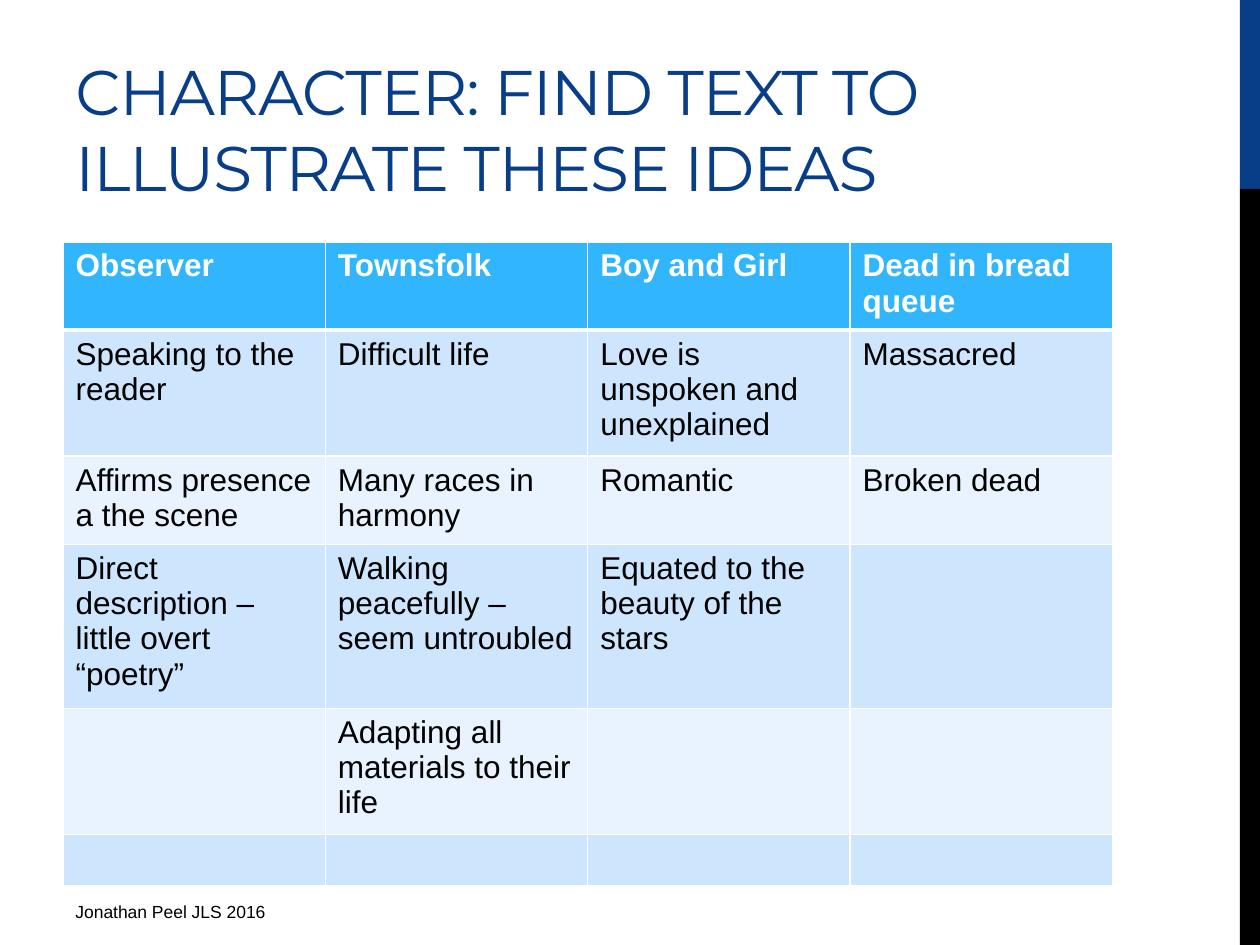
from lxml.etree import SubElement
from pptx import Presentation
from pptx.dml.color import RGBColor
from pptx.enum.shapes import MSO_SHAPE as Shape
from pptx.enum.text import MSO_ANCHOR as Anchor
from pptx.oxml.ns import qn
from pptx.util import Inches, Pt

NAVY, BLACK, WHITE = "073E87", "000000", "FFFFFF"
HEADER_FILL, BAND_FILLS = "31B6FD", ("CEE5FE", "E8F3FF")

ROWS = [
    ["Observer", "Townsfolk", "Boy and Girl", "Dead in bread queue"],
    ["Speaking to the reader", "Difficult life",
     "Love is unspoken and unexplained", "Massacred"],
    ["Affirms presence a the scene", "Many races in harmony", "Romantic", "Broken dead"],
    ["Direct description – little overt “poetry”",
     "Walking peacefully – seem untroubled", "Equated to the beauty of the stars", ""],
    ["", "Adapting all materials to their life", "", ""],
    ["", "", "", ""],
]


def color(value):
    return RGBColor.from_string(value)


def add_border(cell, side, width):
    """Draw a white line on one side (L, R, T or B) of a cell."""
    line = SubElement(cell._tc.get_or_add_tcPr(), qn(f"a:ln{side}"), w=str(Pt(width)))
    fill = SubElement(line, qn("a:solidFill"))
    SubElement(fill, qn("a:srgbClr"), val=WHITE)


class SlideBuilder:
    def __init__(self, page, font="Arial"):
        self.page = page
        self.font = font

    def style(self, para, size, tint, bold=False, font=None):
        para.font.name = font or self.font
        para.font.size = Pt(size)
        para.font.bold = bold
        para.font.color.rgb = color(tint)

    def bar(self, left, top, width, height, fill):
        box = self.page.shapes.add_shape(
            Shape.RECTANGLE, Inches(left), Inches(top), Inches(width), Inches(height))
        box.shadow.inherit = False
        box.fill.solid()
        box.fill.fore_color.rgb = color(fill)
        box.line.fill.background()

    def text(self, left, top, width, height, words, size, tint,
             font=None, anchor=Anchor.TOP, spacing=0):
        """Add a one-paragraph text box; spacing is letter spacing in points."""
        box = self.page.shapes.add_textbox(
            Inches(left), Inches(top), Inches(width), Inches(height))
        frame = box.text_frame
        frame.word_wrap = True
        frame.vertical_anchor = anchor
        para = frame.paragraphs[0]
        span = para.add_run()
        span.text = words
        self.style(para, size, tint, font=font)
        if spacing:
            span._r.get_or_add_rPr().set("spc", str(round(spacing * 100)))

    def table(self, left, top, width, row_height, rows, size):
        """Add a banded table whose rows grow to fit their text."""
        table = self.page.shapes.add_table(
            len(rows), len(rows[0]), Inches(left), Inches(top),
            Inches(width), Inches(row_height * len(rows))).table
        for r, row in enumerate(rows):
            header = r == 0
            fill = HEADER_FILL if header else BAND_FILLS[(r - 1) % 2]
            widths = {"L": 1, "R": 1, "T": 3 if r == 1 else 1, "B": 3 if header else 1}
            for c, words in enumerate(row):
                cell = table.cell(r, c)
                for side, line_width in widths.items():
                    add_border(cell, side, line_width)
                cell.fill.solid()
                cell.fill.fore_color.rgb = color(fill)
                cell.text = words
                self.style(cell.text_frame.paragraphs[0], size,
                           WHITE if header else BLACK, bold=header)


def main():
    deck = Presentation()
    deck.slide_width, deck.slide_height = Inches(10), Inches(7.5)
    builder = SlideBuilder(deck.slides.add_slide(deck.slide_layouts[6]))

    builder.bar(9.84, 0, 0.16, 1.5, NAVY)
    builder.bar(9.84, 1.5, 0.16, 6, BLACK)
    builder.text(0.5, 0.17, 8.92, 1.5, "CHARACTER: FIND TEXT TO ILLUSTRATE THESE IDEAS",
                 36, NAVY, font="Montserrat", anchor=Anchor.BOTTOM, spacing=-0.6)
    builder.table(0.5, 1.92, 8.33, 0.41, ROWS, 18)
    builder.text(0.5, 7.1, 3.75, 0.31, "Jonathan Peel JLS 2016", 10, BLACK)

    deck.save("out.pptx")


if __name__ == "__main__":
    main()
